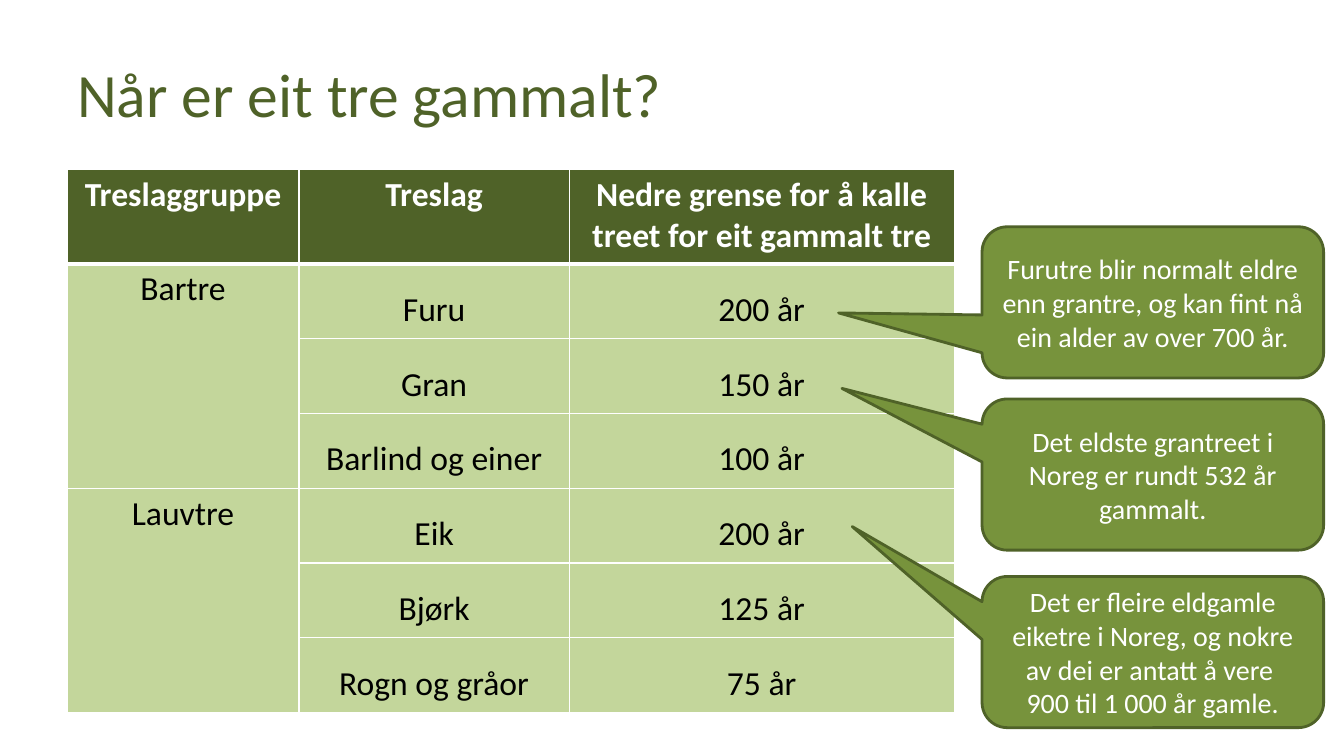
from dataclasses import dataclass

from lxml import etree
from pptx import Presentation
from pptx.dml.color import RGBColor
from pptx.enum.shapes import MSO_SHAPE
from pptx.enum.text import MSO_ANCHOR, PP_ALIGN
from pptx.oxml.ns import qn
from pptx.util import Pt

CALLOUT = MSO_SHAPE.ROUNDED_RECTANGULAR_CALLOUT
MIDDLE = MSO_ANCHOR.MIDDLE
TOP = MSO_ANCHOR.TOP
LEFT = PP_ALIGN.LEFT
CENTER = PP_ALIGN.CENTER
TITLE_ONLY = 5


@dataclass(frozen=True)
class Theme:
    font: str = "Calibri"
    dark: str = "4F6228"
    green: str = "77933C"
    pale: str = "C3D69B"
    white: str = "FFFFFF"
    black: str = "000000"
    title_size: int = 44
    table_size: int = 24
    callout_size: int = 20


THEME = Theme()

HEADINGS = ["Treslaggruppe", "Treslag", "Nedre grense for å kalle treet for eit gammalt tre"]
TREE_GROUPS = {
    "Bartre": [("Furu", "200 år"), ("Gran", "150 år"), ("Barlind og einer", "100 år")],
    "Lauvtre": [("Eik", "200 år"), ("Bjørk", "125 år"), ("Rogn og gråor", "75 år")],
}
COLUMN_WIDTHS = [165.6, 193, 275]
HEADER_HEIGHT, ROW_HEIGHT = 67.6, 53.4

# Top of each callout, its pointer tip as a share of its size, and its text
CALLOUT_LEFT, CALLOUT_WIDTH, CALLOUT_HEIGHT = 701.5, 244, 108
CALLOUTS = [
    (162, (-0.92, 0.07),
     "Furutre blir normalt eldre enn grantre, og kan fint nå ein alder av over 700 år."),
    (285, (-0.91, -0.57),
     "Det eldste grantreet i Noreg er rundt 532 år gammalt."),
    (411.8, (-0.88, -0.83),
     "Det er fleire eldgamle eiketre i Noreg, og nokre av dei er antatt å vere \v"
     "900 til 1 000 år gamle."),
]


def write(frame, text, size, color, align=CENTER, spacing=None, bold=False):
    frame.word_wrap = True
    frame.text = text
    para = frame.paragraphs[0]
    para.alignment = align
    if spacing:
        para.line_spacing = spacing
    for span in para.runs:
        span.font.color.rgb = RGBColor.from_string(color)
        values = {"name": THEME.font, "size": Pt(size), "bold": bold}
        for name, value in values.items():
            setattr(span.font, name, value)


def set_borders(cell, widths):
    properties = cell._tc.get_or_add_tcPr()
    for side in ("lnL", "lnR", "lnT", "lnB"):
        line = etree.SubElement(properties, qn(f"a:{side}"), w=str(Pt(widths.get(side, 1))))
        fill = etree.SubElement(line, qn("a:solidFill"))
        etree.SubElement(fill, qn("a:srgbClr"), val=THEME.white)


def add_title(page, left, top, width, height):
    title = page.shapes.title
    box = {"left": left, "top": top, "width": width, "height": height}
    for name, value in box.items():
        setattr(title, name, Pt(value))
    write(title.text_frame, "Når er eit tre gammalt?", THEME.title_size, THEME.dark, LEFT)
    title.text_frame.vertical_anchor = MIDDLE


def add_tree_table(page, left, top):
    row_count = 1 + sum(len(trees) for trees in TREE_GROUPS.values())
    height = HEADER_HEIGHT + ROW_HEIGHT * (row_count - 1)
    table = page.shapes.add_table(
        row_count, len(HEADINGS), Pt(left), Pt(top), Pt(sum(COLUMN_WIDTHS)), Pt(height)).table
    table.horz_banding = False
    for column, width in zip(table.columns, COLUMN_WIDTHS):
        column.width = Pt(width)

    # Fills and borders
    for index, row in enumerate(table.rows):
        row.height = Pt(ROW_HEIGHT if index else HEADER_HEIGHT)
        widths = {0: {"lnB": 3}, 1: {"lnT": 3}}.get(index, {})
        for cell in row.cells:
            set_borders(cell, widths)
            cell.fill.solid()
            cell.fill.fore_color.rgb = RGBColor.from_string(THEME.pale if index else THEME.dark)
            cell.vertical_anchor = TOP

    # Header row
    for column, heading in enumerate(HEADINGS):
        write(table.cell(0, column).text_frame, heading, THEME.table_size, THEME.white, bold=True)

    # Tree groups, each spanning its species
    first = 1
    for group, trees in TREE_GROUPS.items():
        table.cell(first, 0).merge(table.cell(first + len(trees) - 1, 0))
        write(table.cell(first, 0).text_frame, group, THEME.table_size, THEME.black)
        for index, tree in enumerate(trees, first):
            for column, text in enumerate(tree, 1):
                write(table.cell(index, column).text_frame, text,
                      THEME.table_size, THEME.black, spacing=1.5)
        first += len(trees)


def add_callout(page, left, top, width, height, tip, text):
    callout = page.shapes.add_shape(CALLOUT, Pt(left), Pt(top), Pt(width), Pt(height))
    callout.shadow.inherit = False
    callout.adjustments[0], callout.adjustments[1] = tip
    callout.fill.solid()
    callout.fill.fore_color.rgb = RGBColor.from_string(THEME.green)
    callout.line.color.rgb = RGBColor.from_string(THEME.dark)
    callout.line.width = Pt(2)
    write(callout.text_frame, text, THEME.callout_size, THEME.white)
    callout.text_frame.vertical_anchor = MIDDLE


def main():
    deck = Presentation()
    deck.slide_width, deck.slide_height = Pt(960), Pt(540)
    page = deck.slides.add_slide(deck.slide_layouts[TITLE_ONLY])
    add_title(page, 48, 21, 864, 90)
    add_tree_table(page, 48, 121)
    for top, tip, text in CALLOUTS:
        add_callout(page, CALLOUT_LEFT, top, CALLOUT_WIDTH, CALLOUT_HEIGHT, tip, text)
    deck.save("out.pptx")


if __name__ == "__main__":
    main()
